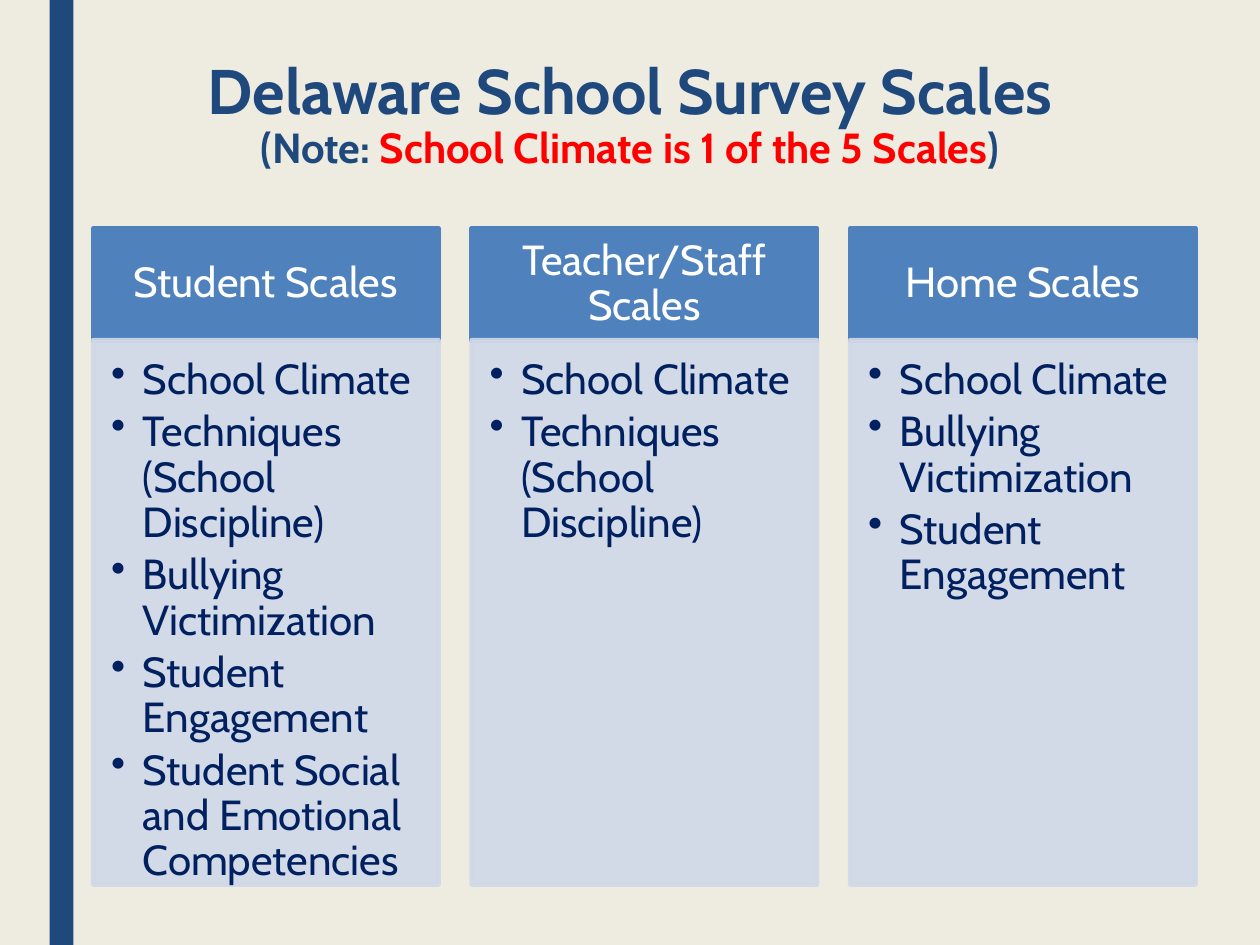
from dataclasses import dataclass

import pptx
import pptx.dml.color
import pptx.enum.shapes
import pptx.enum.text
import pptx.oxml
import pptx.oxml.ns
import pptx.util

Cm = pptx.util.Cm
Pt = pptx.util.Pt
Align = pptx.enum.text.PP_ALIGN
Anchor = pptx.enum.text.MSO_ANCHOR


@dataclass(frozen=True)
class Theme:
    font: str = "Cabin"
    background: str = "EEECE1"
    navy: str = "1F497D"
    header: str = "4F81BD"
    panel: str = "D0D8E8"
    header_text: str = "FFFFFF"
    list_text: str = "002060"
    accent: str = "FF0000"
    title_size: int = 36
    text_size: int = 24
    outline: float = 2.75


THEME = Theme()

COLUMNS = [
    ("Student Scales", [
        "School Climate",
        "Techniques (School Discipline)",
        "Bullying Victimization",
        "Student Engagement",
        "Student Social and Emotional Competencies",
    ]),
    ("Teacher/Staff Scales", [
        "School Climate",
        "Techniques (School Discipline)",
    ]),
    ("Home Scales", [
        "School Climate",
        "Bullying Victimization",
        "Student Engagement",
    ]),
]


def rgb(color):
    return pptx.dml.color.RGBColor.from_string(color)


def style_span(span, size, color, bold=False):
    span.font.name = THEME.font
    span.font.size = Pt(size)
    span.font.bold = bold
    span.font.color.rgb = rgb(color)


def add_rectangle(page, left, top, width, height, color):
    box = page.shapes.add_shape(
        pptx.enum.shapes.MSO_SHAPE.RECTANGLE,
        Cm(left), Cm(top), Cm(width), Cm(height))
    box.shadow.inherit = False
    box.fill.solid()
    box.fill.fore_color.rgb = rgb(color)
    box.line.fill.background()
    return box


def add_outline(box, color):
    box.line.color.rgb = rgb(color)
    box.line.width = Pt(THEME.outline)


def set_opacity(box, percent):
    for color in box._element.spPr.xpath(".//a:srgbClr"):
        alpha = pptx.oxml.parse_xml(
            f'<a:alpha {pptx.oxml.ns.nsdecls("a")} val="{percent * 1000}"/>')
        color.append(alpha)


def set_frame(frame, anchor, left, top, right, bottom):
    frame.word_wrap = True
    frame.vertical_anchor = anchor
    frame.margin_left, frame.margin_top = Cm(left), Cm(top)
    frame.margin_right, frame.margin_bottom = Cm(right), Cm(bottom)


def style_paragraph(para, align, color):
    para.alignment = align
    para.line_spacing = 0.9
    for span in para.runs:
        style_span(span, THEME.text_size, color)


def add_bullet(para):
    properties = para._p.get_or_add_pPr()
    properties.set("marL", str(Cm(0.64)))
    properties.set("indent", str(-Cm(0.64)))
    properties.append(pptx.oxml.parse_xml(
        f'<a:buChar {pptx.oxml.ns.nsdecls("a")} char="•"/>'))


def add_header(page, text, left, top, width, height):
    box = add_rectangle(page, left, top, width, height, THEME.header)
    add_outline(box, THEME.header)
    set_frame(box.text_frame, Anchor.MIDDLE, 0.48, 0.28, 0.48, 0.28)
    box.text_frame.text = text
    style_paragraph(box.text_frame.paragraphs[0], Align.CENTER, THEME.header_text)


def add_list(page, items, left, top, width, height):
    box = add_rectangle(page, left, top, width, height, THEME.panel)
    add_outline(box, THEME.panel)
    set_opacity(box, 90)
    set_frame(box.text_frame, Anchor.TOP, 0.36, 0.36, 0.48, 0.53)
    box.text_frame.text = "\n".join(items)
    for para in box.text_frame.paragraphs:
        style_paragraph(para, Align.LEFT, THEME.list_text)
        para.space_after = Pt(4)
        add_bullet(para)


def fill_title(page):
    title = page.shapes.title
    title.left, title.top = Cm(1.27), Cm(1.09)
    title.width, title.height = Cm(22.86), Cm(2.84)
    set_frame(title.text_frame, Anchor.TOP, 0.25, 0.13, 0.25, 0.13)
    title.text_frame.auto_size = pptx.enum.text.MSO_AUTO_SIZE.NONE
    para = title.text_frame.paragraphs[0]
    para.alignment = Align.CENTER
    para.line_spacing = 0.89
    parts = [
        ("Delaware School Survey Scales", THEME.title_size, THEME.navy),
        ("(Note: ", THEME.text_size, THEME.navy),
        ("School Climate is 1 of the 5 Scales", THEME.text_size, THEME.accent),
        (")", THEME.text_size, THEME.navy),
    ]
    for index, (text, size, color) in enumerate(parts):
        if index == 1:
            para.add_line_break()
        span = para.add_run()
        span.text = text
        style_span(span, size, color, bold=True)


def main():
    deck = pptx.Presentation()
    deck.slide_width, deck.slide_height = Cm(25.4), Cm(19.05)
    page = deck.slides.add_slide(deck.slide_layouts.get_by_name("Title Only"))
    page.background.fill.solid()
    page.background.fill.fore_color.rgb = rgb(THEME.background)

    add_rectangle(page, 1, 0, 0.48, 19.05, THEME.navy)
    fill_title(page)

    first_left, pitch, width = 1.88, 7.63, 6.96
    top, header_height, list_height = 4.6, 2.26, 10.97
    for index, (heading, items) in enumerate(COLUMNS):
        left = first_left + index * pitch
        add_header(page, heading, left, top, width, header_height)
        add_list(page, items, left, top + header_height, width, list_height)

    deck.save("out.pptx")


if __name__ == "__main__":
    main()
